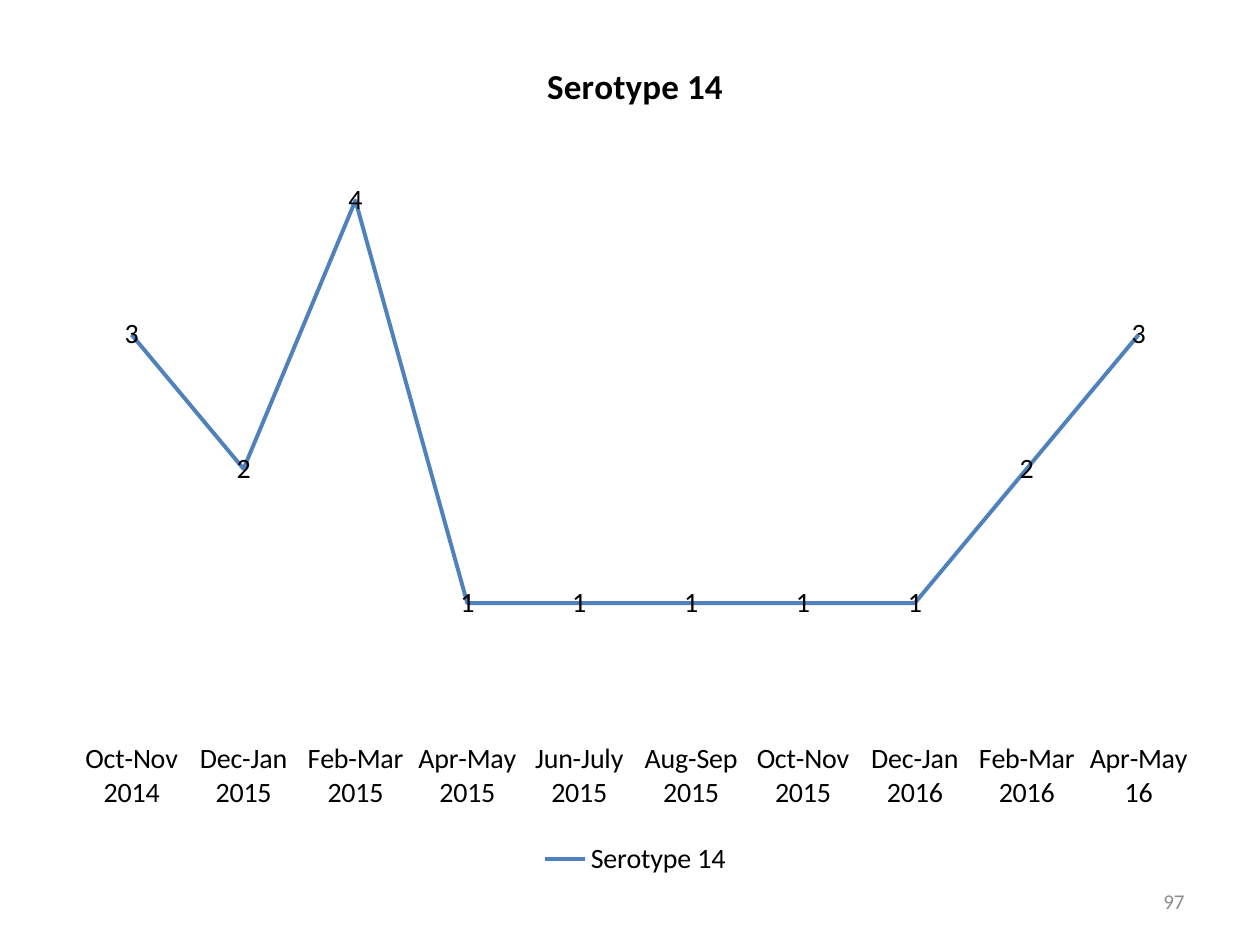
import pptx
import pptx.chart.data
import pptx.dml.color
import pptx.enum.chart
import pptx.enum.text
import pptx.oxml
import pptx.oxml.ns
import pptx.util

Pt = pptx.util.Pt
FONT = "Calibri"
COLORS = {"text": "000000", "line": "4F81BD", "number": "8C8C8C"}
COUNTS = {
    "Oct-Nov 2014": 3,
    "Dec-Jan 2015": 2,
    "Feb-Mar 2015": 4,
    "Apr-May 2015": 1,
    "Jun-July 2015": 1,
    "Aug-Sep 2015": 1,
    "Oct-Nov 2015": 1,
    "Dec-Jan 2016": 1,
    "Feb-Mar 2016": 2,
    "Apr-May 16": 3,
}


def style_font(font, size, color, bold=False):
    font.name = FONT
    font.size = Pt(size)
    font.bold = bold
    font.color.rgb = pptx.dml.color.RGBColor.from_string(COLORS[color])


def place_plot(chart, x, y, w, h):
    """Fix the inner plot area, as fractions of the chart."""
    plot_area = chart.plots[0]._element.getparent()
    for old in plot_area.findall(pptx.oxml.ns.qn("c:layout")):
        plot_area.remove(old)
    plot_area.insert(0, pptx.oxml.parse_xml(
        f'<c:layout {pptx.oxml.ns.nsdecls("c")}><c:manualLayout>'
        '<c:layoutTarget val="inner"/><c:xMode val="edge"/><c:yMode val="edge"/>'
        f'<c:x val="{x}"/><c:y val="{y}"/><c:w val="{w}"/><c:h val="{h}"/>'
        '</c:manualLayout></c:layout>'))


def add_line_chart(page, title, counts, left, top, width, height):
    data = pptx.chart.data.CategoryChartData(number_format="General")
    data.categories = list(counts)
    data.add_series(title, list(counts.values()))
    chart = page.shapes.add_chart(
        pptx.enum.chart.XL_CHART_TYPE.LINE,
        Pt(left), Pt(top), Pt(width), Pt(height), data).chart
    style_font(chart.font, 16, "text")

    # Title and legend
    chart.has_title = True
    frame = chart.chart_title.text_frame
    frame.text = title
    style_font(frame.paragraphs[0].runs[0].font, 20, "text", bold=True)
    chart.chart_title.include_in_layout = False
    chart.has_legend = True
    chart.legend.position = pptx.enum.chart.XL_LEGEND_POSITION.BOTTOM
    chart.legend.include_in_layout = False

    # Axes
    periods = chart.category_axis
    periods.major_tick_mark = pptx.enum.chart.XL_TICK_MARK.NONE
    periods.format.line.fill.background()
    scale = chart.value_axis
    scale.minimum_scale, scale.maximum_scale = 0, 4.5
    scale.has_major_gridlines = False
    scale.visible = False

    # Series and its labels
    plot = chart.plots[0]
    plot.vary_by_categories = False
    series = plot.series[0]
    series.smooth = False
    series.marker.style = pptx.enum.chart.XL_MARKER_STYLE.NONE
    series.format.line.width = Pt(2.25)
    series.format.line.color.rgb = pptx.dml.color.RGBColor.from_string(COLORS["line"])
    labels = series.data_labels
    labels.show_value = True
    labels.position = pptx.enum.chart.XL_LABEL_POSITION.CENTER
    style_font(labels.font, 16, "text")
    place_plot(chart, 0.02, 0.12, 0.96, 0.71)


def add_page_number(page, number, left, top, width, height):
    box = page.shapes.add_textbox(Pt(left), Pt(top), Pt(width), Pt(height))
    frame = box.text_frame
    frame.word_wrap = True
    frame.vertical_anchor = pptx.enum.text.MSO_ANCHOR.MIDDLE
    frame.text = number
    para = frame.paragraphs[0]
    para.alignment = pptx.enum.text.PP_ALIGN.RIGHT
    style_font(para.runs[0].font, 12, "number")


def main():
    deck = pptx.Presentation()
    deck.slide_width, deck.slide_height = Pt(720), Pt(540)
    page = deck.slides.add_slide(deck.slide_layouts[6])
    add_page_number(page, "97", 516, 500.5, 168, 28.75)
    add_line_chart(page, "Serotype 14", COUNTS, 30, 18, 666, 486)
    deck.save("out.pptx")


if __name__ == "__main__":
    main()
